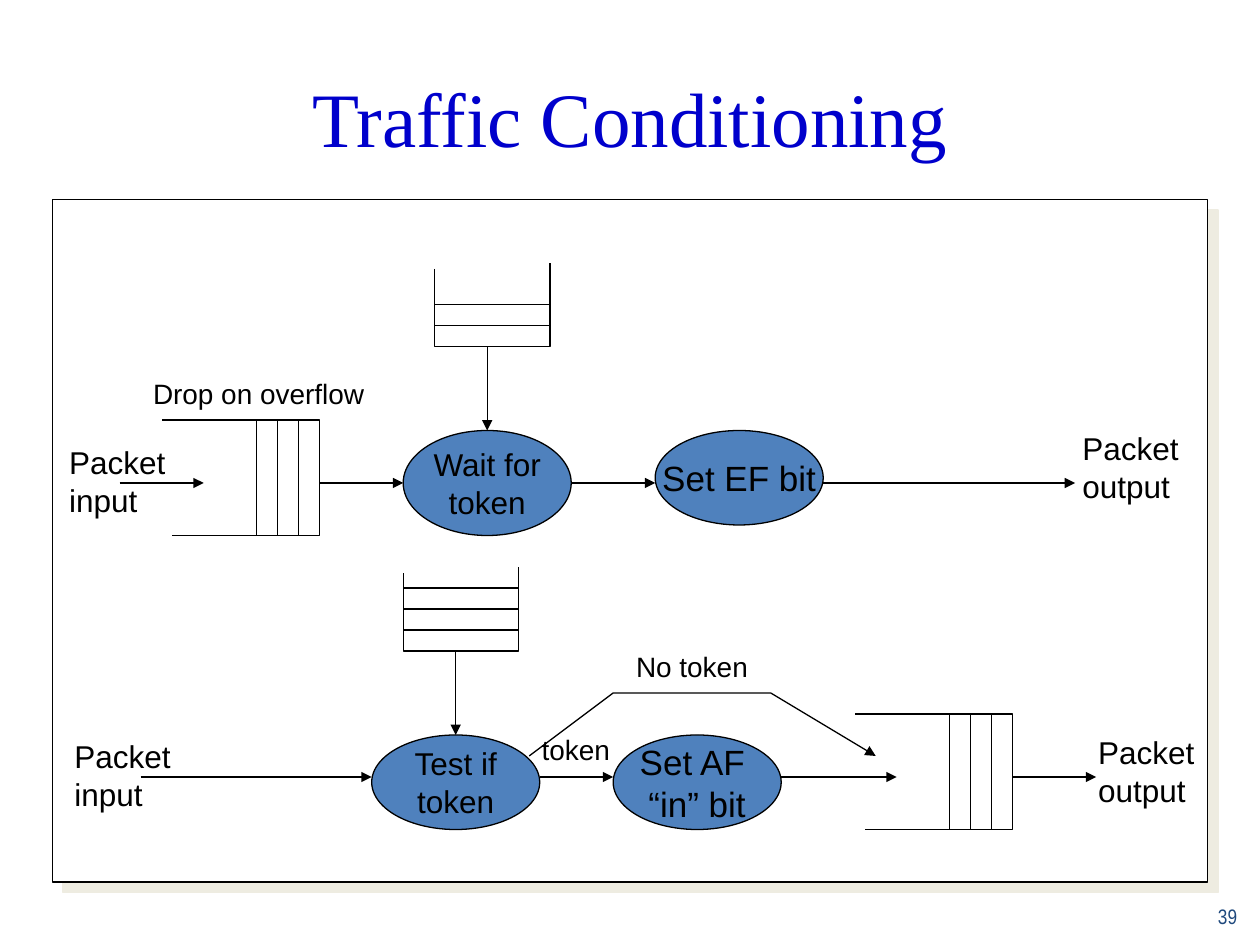
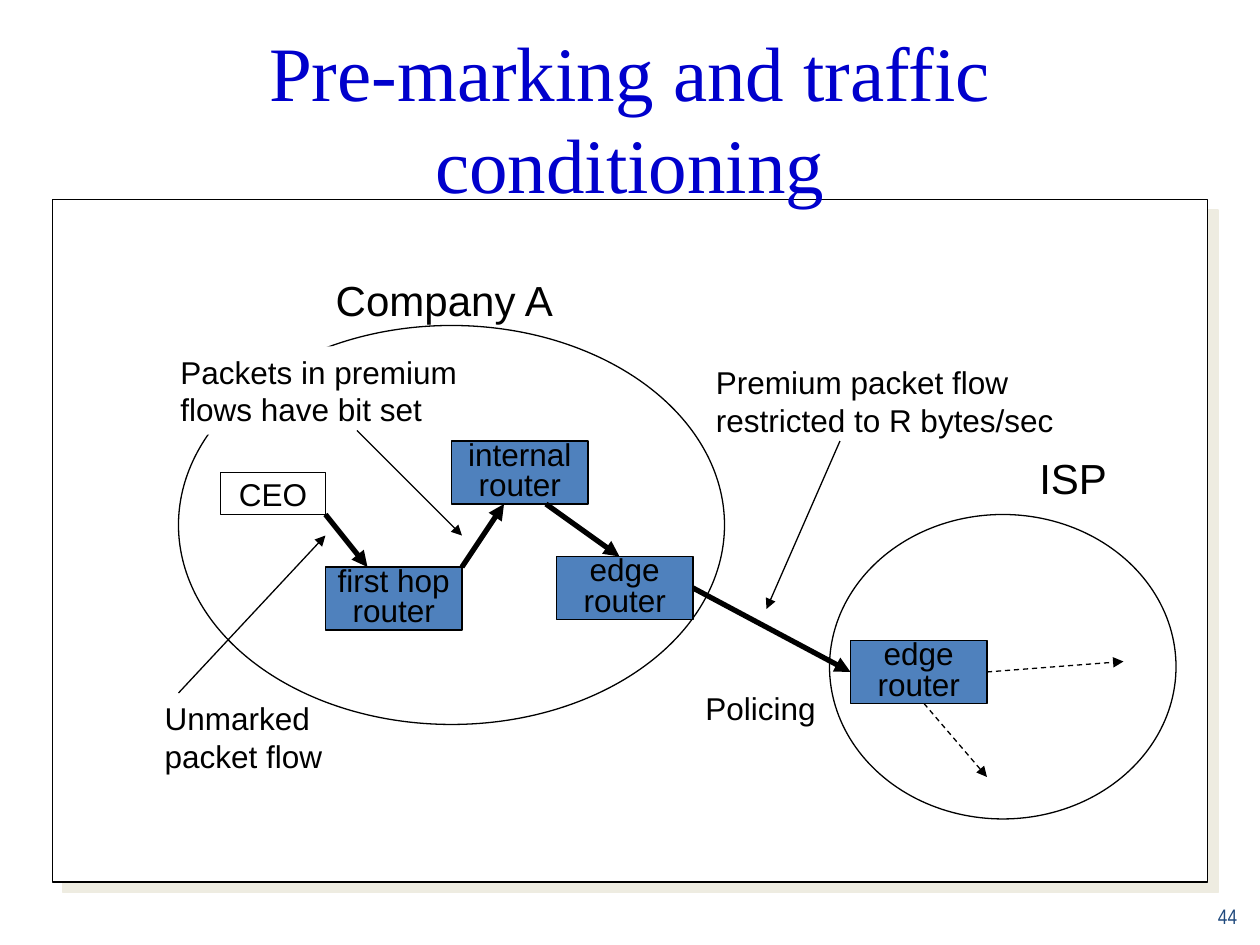
import pptx
import pptx.util
import pptx.dml.color
import pptx.enum.dml
import pptx.enum.shapes
import pptx.enum.text
from lxml import etree

PX = 7620  # EMU in one px, 120 px to the inch
RGB = pptx.dml.color.RGBColor
BLACK = RGB(0, 0, 0)
WHITE = RGB(255, 255, 255)
STEEL = RGB(0x4F, 0x81, 0xBD)
NAVY = RGB(0x1F, 0x49, 0x7D)
BLUE = RGB(0, 0, 0xCC)
SHADE = RGB(0xEE, 0xEC, 0xE1)
NS = "http://schemas.openxmlformats.org/drawingml/2006/main"
KIND = pptx.enum.shapes.MSO_SHAPE
ALIGN = pptx.enum.text.PP_ALIGN
ANCHOR = pptx.enum.text.MSO_ANCHOR
THIN, THICK = 0.75, 3

FRAME = (50, 190, 1100, 650)
HEAD = (60, 36, 1080, 150)
FOOT = (940, 830, 250, 60)

# Traffic conditioning: queues and buckets are (x, y, ...) of the top right corner
QUEUES = [(304, 400), (964, 680)]
BUCKETS = [(524, 250, 2), (494, 540, 3)]  # x, y, tokens held
STEPS = [  # box, text, size
    ((384, 410, 160, 100), "Wait for\ntoken", 18),
    ((624, 410, 160, 90), "Set EF bit", 20),
    ((354, 700, 160, 90), "Test if\ntoken", 18),
    ((584, 700, 160, 90), "Set AF \n“in” bit", 20),
]
FLOWS = [  # y, then start and end x of each arrow
    (460, [(114, 194), (304, 384), (544, 624), (784, 1024)]),
    (740, [(134, 354), (514, 584), (744, 854), (964, 1044)]),
]
BYPASS = [(504, 720), (584, 660), (734, 660), (834, 720)]
NOTES = [  # box, text, size
    ((54, 416, 116, 84), "Packet\ninput", 18),
    ((1019, 403, 116, 84), "Packet\noutput", 18),
    ((59, 696, 116, 84), "Packet\ninput", 18),
    ((1034, 692, 116, 84), "Packet\noutput", 18),
    ((134, 353, 226, 44), "Drop on overflow", 16),
    ((504, 692, 89, 44), "token", 16),
    ((594, 613, 131, 44), "No token", 16),
]

# Pre-marking
CLOUDS = [(170, 310, 520, 380), (790, 490, 330, 290)]
ROUTERS = [
    (310, 540, "first hop\nrouter"),
    (430, 420, "internal\nrouter"),
    (530, 530, "edge\nrouter"),
    (810, 610, "edge\nrouter"),
]
HOPS = [
    (310, 490, 350, 540),
    (440, 540, 480, 480),
    (520, 480, 590, 530),
    (660, 560, 810, 640),
]
LABELS = [  # box, text, size, fill
    ((978, 425, 89, 60), "ISP", 24, None),
    ((308, 256, 233, 60), "Company A", 24, None),
    ((145, 660, 174, 84), "Unmarked\npacket flow", 18, None),
    ((160, 330, 288, 84), "Packets in premium\nflows have bit set", 18, WHITE),
    ((670, 340, 346, 84), "Premium packet flow\nrestricted to R bytes/sec", 18, WHITE),
    ((660, 650, 131, 48), "Policing", 18, None),
]
HINTS = [(340, 410, 440, 510), (170, 660, 310, 510), (800, 420, 730, 580)]
EXITS = [(940, 640, 1070, 630), (880, 670, 940, 740)]


def emu(box):
    return [v * PX for v in box]


def write(shape, text, size, align=ALIGN.LEFT, anchor=ANCHOR.TOP,
          font="Arial", color=BLACK, wrap=False, space=None):
    frame = shape.text_frame
    frame.text = text
    frame.word_wrap = wrap
    frame.auto_size = pptx.enum.text.MSO_AUTO_SIZE.NONE
    frame.vertical_anchor = anchor
    for para in frame.paragraphs:
        para.alignment = align
        para.line_spacing = space
        for run in para.runs:
            run.font.size = pptx.util.Pt(size)
            run.font.name = font
            run.font.color.rgb = color


def paint(shape, fill=None):
    """Set the fill, a thin black line and no shadow."""
    shape.shadow.inherit = False
    if fill is None:
        shape.fill.background()
    else:
        shape.fill.solid()
        shape.fill.fore_color.rgb = fill
    ink(shape.line)


def ink(line, width=THIN):
    line.color.rgb = BLACK
    line.width = pptx.util.Pt(width)


def block(slide, kind, box, fill=None):
    shape = slide.shapes.add_shape(kind, *emu(box))
    paint(shape, fill)
    return shape


def label(slide, box, text, size, fill=None):
    shape = slide.shapes.add_textbox(*emu(box))
    if fill is not None:
        shape.fill.solid()
        shape.fill.fore_color.rgb = fill
    write(shape, text, size)


def tip(line):
    etree.SubElement(line._get_or_add_ln(), f"{{{NS}}}tailEnd", type="triangle")


def link(slide, ends, width=THIN, head=True, dash=False):
    wire = slide.shapes.add_connector(
        pptx.enum.shapes.MSO_CONNECTOR.STRAIGHT, *emu(ends))
    ink(wire.line, width)
    if dash:
        wire.line.dash_style = pptx.enum.dml.MSO_LINE.DASH
    if head:
        tip(wire.line)
    etree.SubElement(wire.element.spPr, f"{{{NS}}}effectLst")


def trace(slide, points):
    """Draw an open outline through the points."""
    pen = slide.shapes.build_freeform(*points[0], scale=PX)
    pen.add_line_segments(points[1:], close=False)
    shape = pen.convert_to_shape()
    paint(shape)
    return shape


def queue(slide, x, y):
    low = y + 110
    trace(slide, [(x - 140, low), (x, low), (x, y), (x - 150, y)])
    for k in range(1, 4):
        link(slide, (x - 20 * k, low, x - 20 * k, y), head=False)


def bucket(slide, x, y, count):
    left, low = x - 110, y + 80
    trace(slide, [(left, y + 6), (left, low), (x, low), (x, y)])
    for k in range(1, count + 1):
        link(slide, (left, low - 20 * k, x, low - 20 * k), head=False)
    link(slide, (x - 60, low, x - 60, low + 80))


def start(deck, title, number):
    """Add a slide with the shared frame, title and page number."""
    slide = deck.slides.add_slide(deck.slide_layouts[5])
    foot = slide.shapes.add_textbox(*emu(FOOT))
    write(foot, number, 12, ALIGN.RIGHT, ANCHOR.BOTTOM, "Arial Narrow", NAVY, True)
    frame = block(slide, KIND.RECTANGLE, FRAME, WHITE)
    glow = frame.element.spPr.find(f"{{{NS}}}effectLst")
    cast = etree.SubElement(glow, f"{{{NS}}}outerShdw", dist="107950",
                            dir="2700000", algn="ctr", rotWithShape="0")
    etree.SubElement(cast, f"{{{NS}}}srgbClr", val=str(SHADE))
    head = slide.shapes.title
    head.left, head.top, head.width, head.height = emu(HEAD)
    write(head, title, 44, ALIGN.CENTER, ANCHOR.MIDDLE, "Times New Roman", BLUE, True)
    frame.element.addnext(head.element)
    return slide


def shaping(deck):
    slide = start(deck, "Traffic Conditioning", "39")
    for spot in QUEUES:
        queue(slide, *spot)
    for spot in BUCKETS:
        bucket(slide, *spot)
    for box, text, size in STEPS:
        oval = block(slide, KIND.OVAL, box, STEEL)
        write(oval, text, size, ALIGN.CENTER, ANCHOR.MIDDLE)
    for y, spans in FLOWS:
        for left, right in spans:
            link(slide, (left, y, right, y))
    tip(trace(slide, BYPASS).line)
    for note in NOTES:
        label(slide, *note)


def marking(deck):
    slide = start(deck, "Pre-marking and traffic conditioning", "44")
    for box in CLOUDS:
        block(slide, KIND.OVAL, box)
    for x, y, text in ROUTERS:
        router = block(slide, KIND.RECTANGLE, (x, y, 130, 60), STEEL)
        write(router, text, 18, ALIGN.CENTER, ANCHOR.MIDDLE, space=0.8)
    host = block(slide, KIND.RECTANGLE, (210, 450, 100, 40))
    write(host, "CEO", 18, ALIGN.CENTER, ANCHOR.MIDDLE)
    for ends in HOPS:
        link(slide, ends, THICK)
    for item in LABELS:
        label(slide, *item)
    for ends in HINTS:
        link(slide, ends)
    for ends in EXITS:
        link(slide, ends, dash=True)


def main():
    deck = pptx.Presentation()
    deck.slide_width, deck.slide_height = emu((1200, 900))
    shaping(deck)
    marking(deck)
    deck.save("out.pptx")


if __name__ == "__main__":
    main()
